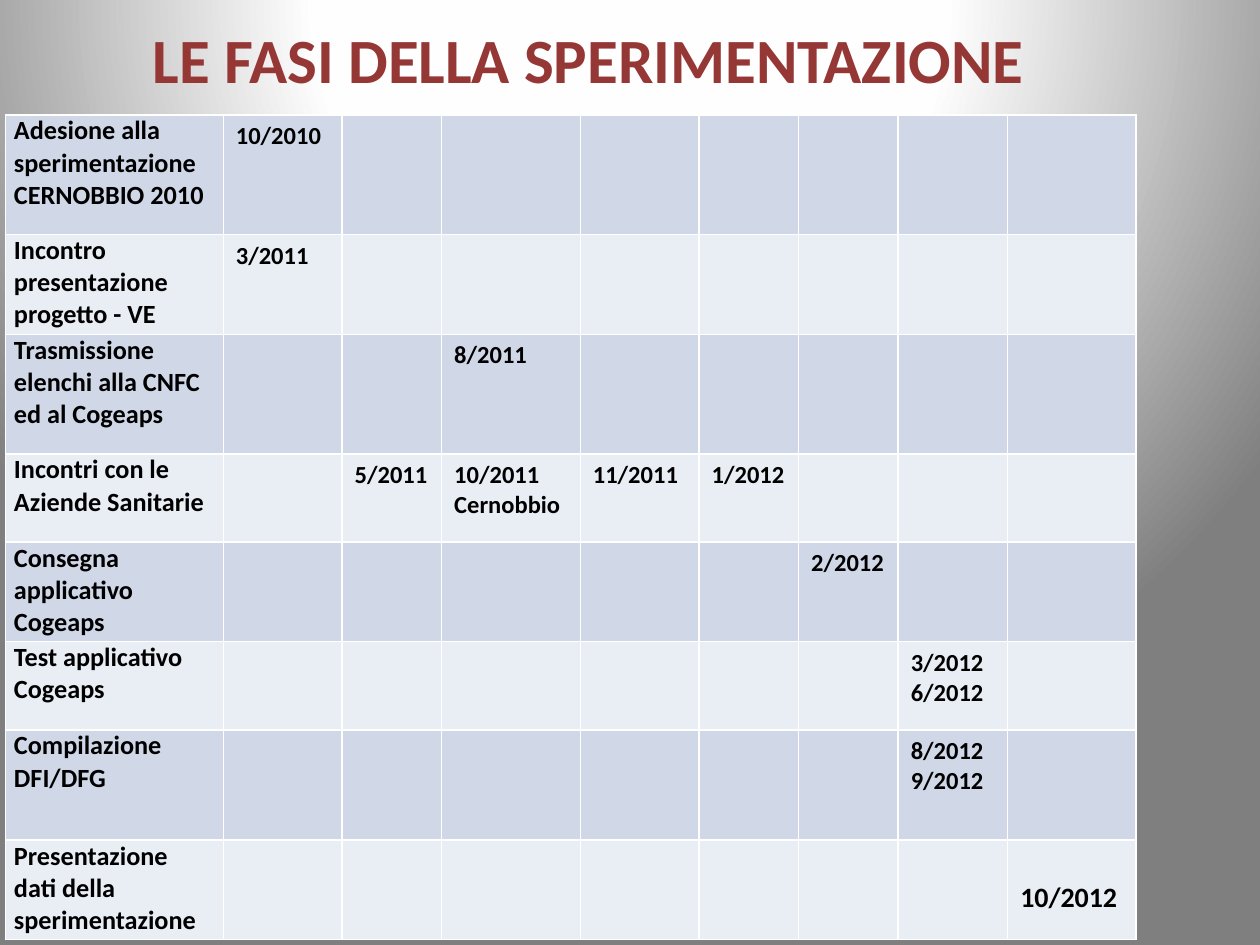
import pptx
import pptx.dml.color
import pptx.enum.text
import pptx.oxml
import pptx.util

Pt = pptx.util.Pt

FONT = "Calibri"
COLORS = {
    "title": "953735",
    "text": "000000",
    "odd_row": "D0D8E8",
    "even_row": "E9EDF4",
    "glow": "FFFFFF",
    "near_white": "FEFEFE",
    "edge": "7F7F7F",
}

TITLE = "LE FASI DELLA SPERIMENTAZIONE"

# Each phase: row height, label paragraphs, {column: date paragraphs}
PHASES = [
    (68.4, ["Adesione alla sperimentazione CERNOBBIO 2010"], {1: ["10/2010"]}),
    (56.9, ["Incontro presentazione progetto - VE"], {1: ["3/2011"]}),
    (68.4, ["Trasmissione elenchi alla CNFC ed al Cogeaps"], {3: ["8/2011"]}),
    (50.4, ["Incontri con le Aziende Sanitarie"],
     {2: ["5/2011"], 3: ["10/2011 Cernobbio"], 4: ["11/2011"], 5: ["1/2012"]}),
    (56.9, ["Consegna applicativo Cogeaps"], {6: ["2/2012"]}),
    (50.4, ["Test applicativo", "Cogeaps"], {7: ["3/2012", "6/2012"]}),
    (63.0, ["Compilazione DFI/DFG"], {7: ["8/2012", "9/2012"]}),
    (56.9, ["Presentazione dati della sperimentazione"], {8: ["10/2012"]}),
]
COLUMN_WIDTHS = [124.6, 67.9, 56.9, 79.2, 67.9, 56.9, 56.9, 62.6, 73.4]
TABLE_LEFT, TABLE_TOP = 3, 65.7
LABEL_SIZE, DATE_SIZE, FINAL_DATE_SIZE = 15, 14, 16
FINAL_DATE_TOP = 23


def write_paragraphs(text_frame, lines, size, color):
    for index, line in enumerate(lines):
        paragraph = text_frame.paragraphs[0] if index == 0 else text_frame.add_paragraph()
        run = paragraph.add_run()
        run.text = line
        run.font.name = FONT
        run.font.size = Pt(size)
        run.font.bold = True
        run.font.color.rgb = pptx.dml.color.RGBColor.from_string(COLORS[color])


def set_background(slide):
    """Fill the background with a circular gradient centred above the slide."""
    stops = "".join(
        f'<a:gs pos="{position * 1000}"><a:srgbClr val="{COLORS[name]}"/></a:gs>'
        for position, name in [(0, "glow"), (40, "near_white"), (100, "edge")]
    )
    background = pptx.oxml.parse_xml(
        '<p:bg xmlns:p="http://schemas.openxmlformats.org/presentationml/2006/main" '
        'xmlns:a="http://schemas.openxmlformats.org/drawingml/2006/main">'
        f'<p:bgPr><a:gradFill rotWithShape="1"><a:gsLst>{stops}</a:gsLst>'
        '<a:path path="circle">'
        '<a:fillToRect l="50000" t="-80000" r="50000" b="180000"/></a:path>'
        '</a:gradFill><a:effectLst/></p:bgPr></p:bg>'
    )
    slide.element.cSld.insert(0, background)


def add_title(slide):
    title = slide.shapes.title
    title.left, title.top, title.width, title.height = Pt(31), Pt(0), Pt(610.6), Pt(67)
    title.text_frame.vertical_anchor = pptx.enum.text.MSO_ANCHOR.MIDDLE
    write_paragraphs(title.text_frame, [TITLE], 36, "title")
    title.text_frame.paragraphs[0].alignment = pptx.enum.text.PP_ALIGN.CENTER


def add_phase_table(slide):
    table = slide.shapes.add_table(
        len(PHASES), len(COLUMN_WIDTHS), Pt(TABLE_LEFT), Pt(TABLE_TOP),
        Pt(sum(COLUMN_WIDTHS)), Pt(sum(phase[0] for phase in PHASES)),
    ).table
    table.first_row = False
    table.horz_banding = False
    for column, width in zip(table.columns, COLUMN_WIDTHS):
        column.width = Pt(width)

    for row_index, (height, label, dates) in enumerate(PHASES):
        row = table.rows[row_index]
        row.height = Pt(height)
        fill = COLORS["even_row" if row_index % 2 else "odd_row"]
        final = row_index == len(PHASES) - 1
        for column_index, cell in enumerate(row.cells):
            cell.fill.solid()
            cell.fill.fore_color.rgb = pptx.dml.color.RGBColor.from_string(fill)
            if column_index == 0:
                cell.margin_left = cell.margin_right = Pt(5)
                cell.margin_top = cell.margin_bottom = Pt(0)
                write_paragraphs(cell.text_frame, label, LABEL_SIZE, "text")
            elif column_index in dates:
                if final:
                    cell.margin_top = Pt(FINAL_DATE_TOP)
                size = FINAL_DATE_SIZE if final else DATE_SIZE
                write_paragraphs(cell.text_frame, dates[column_index], size, "text")


def main():
    presentation = pptx.Presentation()
    presentation.slide_width, presentation.slide_height = Pt(720), Pt(540)
    slide = presentation.slides.add_slide(presentation.slide_layouts.get_by_name("Title Only"))
    set_background(slide)
    add_title(slide)
    add_phase_table(slide)
    presentation.save("out.pptx")


if __name__ == "__main__":
    main()
